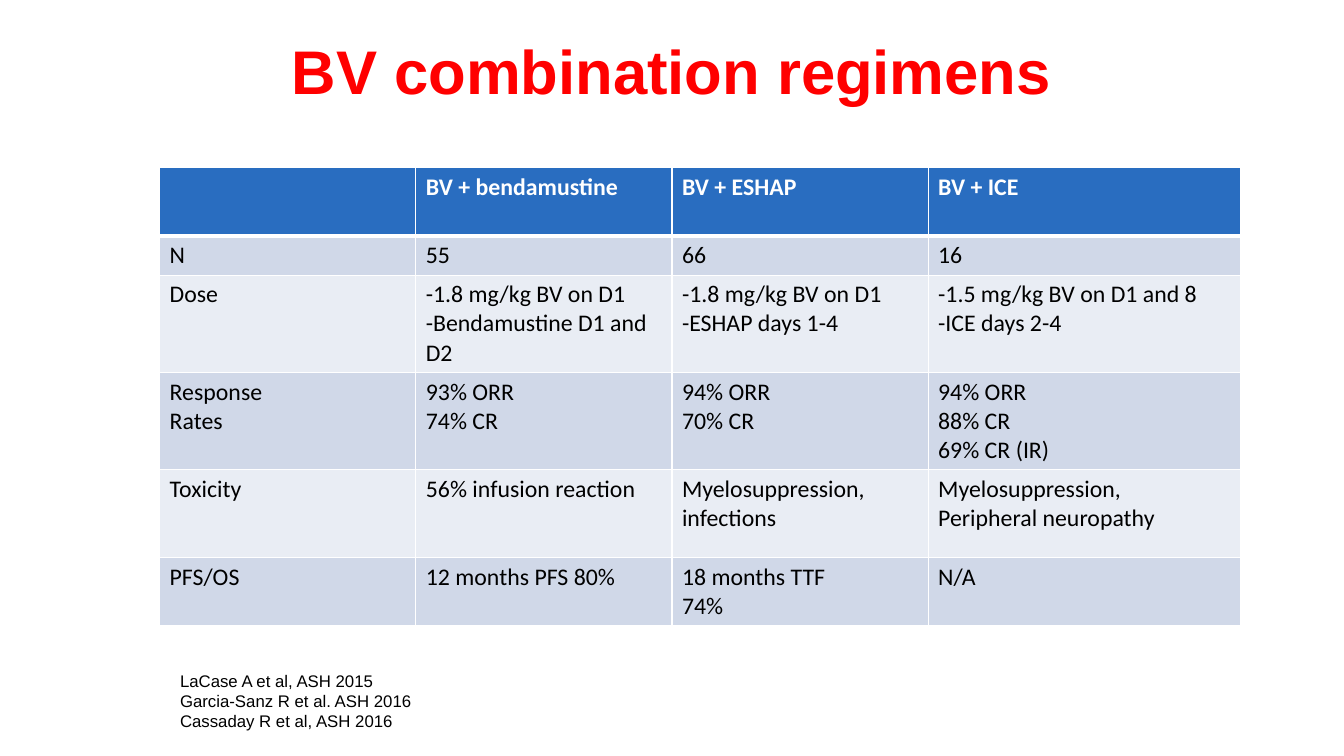
from dataclasses import dataclass

from lxml import etree
from pptx import Presentation
from pptx.dml.color import RGBColor
from pptx.enum import text
from pptx.oxml import ns
from pptx.util import Pt


@dataclass(frozen=True)
class Theme:
    title: str = "FF0000"
    header: str = "296DC0"
    bands: tuple = ("D0D8E8", "E9EDF4")
    light: str = "FFFFFF"
    ink: str = "000000"
    heading_font: str = "Arial"
    table_font: str = "Calibri"
    title_size: float = 44
    table_size: float = 17
    source_size: float = 12
    rule: float = 1
    header_rule: float = 3


THEME = Theme()

COLUMN_WIDTHS = (183, 183, 183, 223)
ROW_HEIGHTS = (48.75, 26.6, 59, 66.2, 62.6, 46.8)
REGIMENS = (
    ("", "BV + bendamustine", "BV + ESHAP", "BV + ICE"),
    ("N", "55", "66", "16"),
    ("Dose", "-1.8 mg/kg BV on D1\n-Bendamustine D1 and D2",
     "-1.8 mg/kg BV on D1\n-ESHAP days 1-4",
     "-1.5 mg/kg BV on D1 and 8\n-ICE days 2-4"),
    ("Response\nRates", "93% ORR\n74% CR", "94% ORR\n70% CR",
     "94% ORR\n88% CR\n69% CR (IR)"),
    ("Toxicity", "56% infusion reaction", "Myelosuppression,\ninfections",
     "Myelosuppression,\nPeripheral neuropathy"),
    ("PFS/OS", "12 months PFS 80%", "18 months TTF\n74%", "N/A"),
)
SOURCES = (
    "LaCase A et al, ASH 2015",
    "Garcia-Sanz R et al. ASH 2016",
    "Cassaday R et al, ASH 2016",
)


def format_text(tf, font, size, color, bold=False):
    for p in tf.paragraphs:
        for r in p.runs:
            r.font.name = font
            r.font.size = Pt(size)
            r.font.bold = bold
            r.font.color.rgb = RGBColor.from_string(color)


def set_borders(cell, top, bottom):
    tc_pr = cell._tc.get_or_add_tcPr()
    widths = {"L": THEME.rule, "R": THEME.rule, "T": top, "B": bottom}
    for i, (side, width) in enumerate(widths.items()):
        ln = etree.Element(ns.qn(f"a:ln{side}"), w=str(Pt(width)))
        fill = etree.SubElement(ln, ns.qn("a:solidFill"))
        etree.SubElement(fill, ns.qn("a:srgbClr"), val=THEME.light)
        tc_pr.insert(i, ln)


def add_title(s, left, top, width, height):
    sp = s.shapes.title
    sp.left, sp.top, sp.width, sp.height = map(Pt, (left, top, width, height))
    tf = sp.text_frame
    tf.text = "BV combination regimens"
    tf.vertical_anchor = text.MSO_ANCHOR.MIDDLE
    tf.paragraphs[0].alignment = text.PP_ALIGN.CENTER
    format_text(tf, THEME.heading_font, THEME.title_size, THEME.title, True)


def add_regimen_table(s, left, top):
    table = s.shapes.add_table(
        len(ROW_HEIGHTS), len(COLUMN_WIDTHS), Pt(left), Pt(top),
        Pt(sum(COLUMN_WIDTHS)), Pt(sum(ROW_HEIGHTS))).table
    for column, width in zip(table.columns, COLUMN_WIDTHS):
        column.width = Pt(width)
    for i, (row, height, values) in enumerate(
            zip(table.rows, ROW_HEIGHTS, REGIMENS)):
        row.height = Pt(height)
        is_header = i == 0
        fill = THEME.header if is_header else THEME.bands[(i - 1) % 2]
        color = THEME.light if is_header else THEME.ink
        top_rule = THEME.header_rule if i == 1 else THEME.rule
        bottom_rule = THEME.header_rule if is_header else THEME.rule
        for cell, value in zip(row.cells, values):
            cell.text_frame.text = value
            format_text(cell.text_frame, THEME.table_font, THEME.table_size,
                        color, is_header)
            cell.fill.solid()
            cell.fill.fore_color.rgb = RGBColor.from_string(fill)
            set_borders(cell, top_rule, bottom_rule)


def add_sources(s, left, top, width, height):
    sp = s.shapes.add_textbox(Pt(left), Pt(top), Pt(width), Pt(height))
    tf = sp.text_frame
    tf.word_wrap = True
    tf.auto_size = text.MSO_AUTO_SIZE.SHAPE_TO_FIT_TEXT
    tf.text = "\n".join(SOURCES)
    format_text(tf, THEME.heading_font, THEME.source_size, THEME.ink)


def main():
    prs = Presentation()
    prs.slide_width, prs.slide_height = Pt(960), Pt(540)
    s = prs.slides.add_slide(prs.slide_layouts[5])
    add_title(s, 174, 12, 612, 75.6)
    add_regimen_table(s, 114, 119.75)
    add_sources(s, 121.5, 475.2, 369.5, 51)
    prs.save("out.pptx")


if __name__ == "__main__":
    main()
